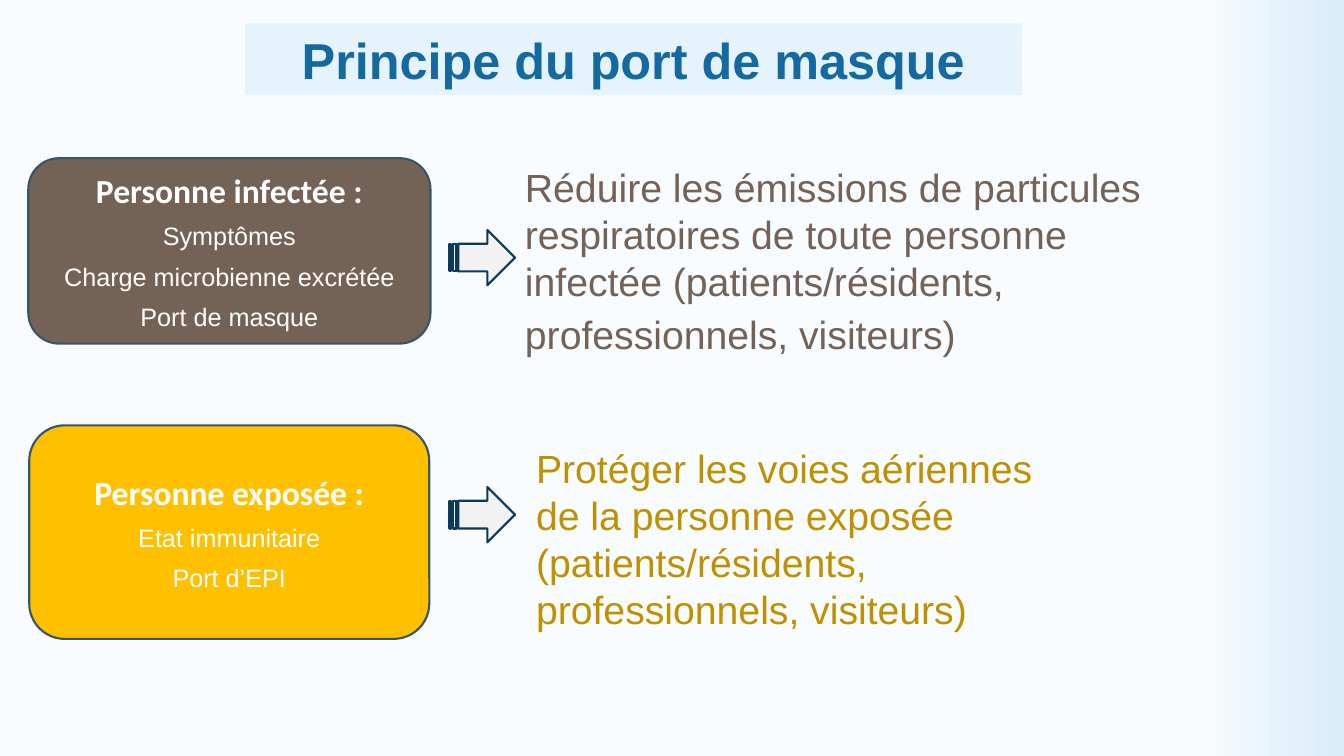
from pptx import Presentation
from pptx.dml.color import RGBColor
from pptx.enum import shapes, text
from pptx.util import Pt

PALE = RGBColor(0xF9, 0xFC, 0xFE)
SKY = RGBColor(0xD8, 0xEC, 0xFA)
BAND = RGBColor(0xE5, 0xF3, 0xFC)
BLUE = RGBColor(0x15, 0x69, 0xA1)
NAVY = RGBColor(0x0B, 0x39, 0x59)
SLATE = RGBColor(0x37, 0x55, 0x68)
GREY = RGBColor(0xF2, 0xF2, 0xF2)
BROWN = RGBColor(0x74, 0x62, 0x56)
GOLD = RGBColor(0xFF, 0xC0, 0x00)
OCHRE = RGBColor(0xBF, 0x90, 0x00)
WHITE = RGBColor(0xFF, 0xFF, 0xFF)
KIND = shapes.MSO_SHAPE
ALIGN = text.PP_ALIGN
ANCHOR = text.MSO_ANCHOR


def write(par, words, size=28, color=WHITE, font="Arial", bold=False,
          align=ALIGN.LEFT, lead=None):
    par.alignment = align
    if lead:
        par.line_spacing = Pt(lead)
    run = par.add_run()
    run.text = words
    run.font.size = Pt(size)
    run.font.name = font
    run.font.bold = bold
    run.font.color.rgb = color


class Deck:
    """Hold the style and the current slide, and draw each kind of element."""

    def __init__(self):
        self.prs = Presentation()
        self.prs.slide_width, self.prs.slide_height = Pt(960), Pt(540)
        self.slide = self.prs.slides.add_slide(self.prs.slide_layouts[6])

    def back(self, stops):
        fill = self.slide.background.fill
        fill.gradient()
        fill.gradient_angle = 0
        for stop, (place, color) in zip(fill.gradient_stops, stops):
            stop.position = place
            stop.color.rgb = color

    def shape(self, kind, area, fill, line=None):
        item = self.slide.shapes.add_shape(kind, *map(Pt, area))
        item.shadow.inherit = False
        item.fill.solid()
        item.fill.fore_color.rgb = fill
        if line is None:
            item.line.fill.background()
        else:
            item.line.color.rgb = line
            item.line.width = Pt(1.5)
        return item

    def title(self, words, area):
        frame = self.shape(KIND.RECTANGLE, area, BAND).text_frame
        frame.vertical_anchor = ANCHOR.MIDDLE
        write(frame.paragraphs[0], words, size=36, color=BLUE, bold=True,
              align=ALIGN.CENTER)

    def arrow(self, top):
        area = (321.1, top, 46.8, 39.6)
        self.shape(KIND.STRIPED_RIGHT_ARROW, area, GREY, NAVY)

    def card(self, head, items, area, fill, lead=None):
        frame = self.shape(KIND.ROUNDED_RECTANGLE, area, fill, SLATE).text_frame
        frame.word_wrap = True
        frame.vertical_anchor = ANCHOR.MIDDLE
        write(frame.paragraphs[0], head, size=24, font="Calibri", bold=True,
              align=ALIGN.CENTER, lead=lead)
        for item in items:
            write(frame.add_paragraph(), item, size=18, align=ALIGN.CENTER,
                  lead=28.8)

    def note(self, lines, area, color):
        frame = self.slide.shapes.add_textbox(*map(Pt, area)).text_frame
        frame.word_wrap = True
        for i, line in enumerate(lines):
            par = frame.add_paragraph() if i else frame.paragraphs[0]
            write(par, line, color=color)
        return frame


def main():
    deck = Deck()
    deck.back([(0.89, PALE), (1, SKY)])
    deck.title("Principe du port de masque", (175, 16.6, 555.1, 51.1))
    for top in (347.8, 164.2):
        deck.arrow(top)
    goal = deck.note(
        ["Réduire les émissions de particules respiratoires de toute personne "
         "infectée (patients/résidents, professionnels, visiteurs)"],
        (367.9, 113, 460.8, 147.6), BROWN)
    write(goal.paragraphs[0], " ", size=32, color=BROWN)
    deck.note(
        ["Protéger les voies aériennes de la personne exposée",
         "(patients/résidents, professionnels, visiteurs)"],
        (375.8, 313.9, 375.1, 143.3), OCHRE)
    deck.card("Personne infectée :",
              ["Symptômes", "Charge microbienne excrétée", "Port de masque"],
              (20.2, 113, 287.3, 132.5), BROWN)
    deck.card("Personne exposée :", ["Etat immunitaire", "Port d’EPI"],
              (20.9, 303.8, 285.8, 152.6), GOLD, lead=28.8)
    deck.prs.save("out.pptx")


if __name__ == "__main__":
    main()
